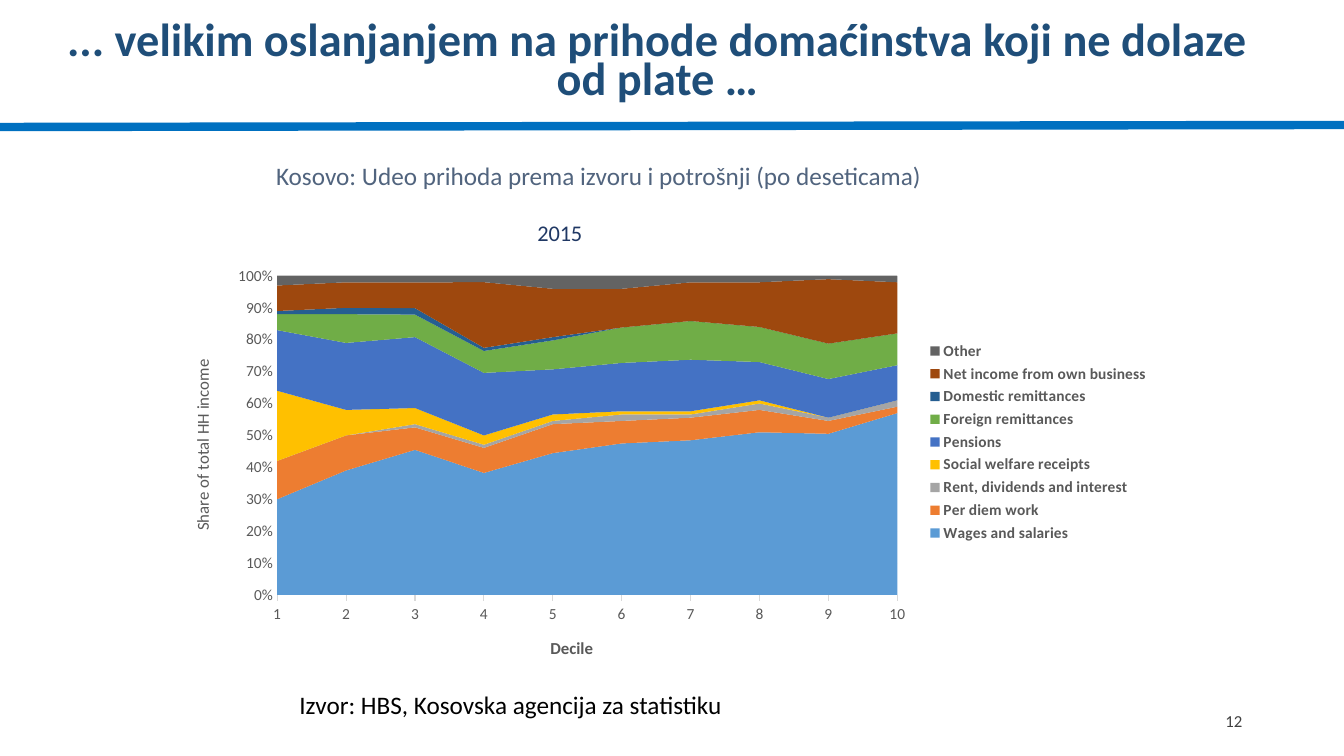
from lxml.etree import SubElement
from pptx import Presentation
from pptx.chart.data import CategoryChartData
from pptx.dml.color import RGBColor
from pptx.enum.chart import XL_CHART_TYPE, XL_LEGEND_POSITION, XL_TICK_MARK
from pptx.enum.shapes import MSO_CONNECTOR
from pptx.enum.text import MSO_ANCHOR, MSO_AUTO_SIZE, PP_ALIGN
from pptx.oxml import parse_xml
from pptx.oxml.ns import nsdecls, qn
from pptx.util import Inches, Pt

FONT = "Calibri"
TITLE_BLUE = RGBColor(0x1F, 0x4E, 0x79)
RULE_BLUE = RGBColor(0x00, 0x70, 0xC0)
SUBTITLE_BLUE = RGBColor(0x51, 0x64, 0x7E)
YEAR_BLUE = RGBColor(0x20, 0x38, 0x64)
BLACK = RGBColor(0, 0, 0)
NUMBER_GRAY = RGBColor(0x40, 0x40, 0x40)
AXIS_GRAY = RGBColor(0x59, 0x59, 0x59)
GRID_GRAY = RGBColor(0xD9, 0xD9, 0xD9)

INCOME_SOURCES = [
    ("Wages and salaries", (30, 39, 45, 39, 44, 47, 48, 51, 50, 57), RGBColor(0x5B, 0x9B, 0xD5)),
    ("Per diem work", (12, 11, 7, 8, 9, 7, 7, 7, 4, 2), RGBColor(0xED, 0x7D, 0x31)),
    ("Rent, dividends and interest", (0, 0, 1, 1, 1, 2, 1, 2, 1, 2), RGBColor(0xA5, 0xA5, 0xA5)),
    ("Social welfare receipts", (22, 8, 5, 3, 2, 1, 1, 1, 0, 0), RGBColor(0xFF, 0xC0, 0x00)),
    ("Pensions", (19, 21, 22, 20, 14, 15, 16, 12, 12, 11), RGBColor(0x44, 0x72, 0xC4)),
    ("Foreign remittances", (5, 9, 7, 7, 9, 11, 12, 11, 11, 10), RGBColor(0x70, 0xAD, 0x47)),
    ("Domestic remittances", (1, 2, 2, 1, 1, 0, 0, 0, 0, 0), RGBColor(0x25, 0x5E, 0x91)),
    ("Net income from own business", (8, 8, 8, 21, 15, 12, 12, 14, 20, 16), RGBColor(0x9E, 0x48, 0x0E)),
    ("Other", (3, 2, 2, 2, 4, 4, 2, 2, 1, 2), RGBColor(0x63, 0x63, 0x63)),
]


def style_font(font, size, color, bold=False):
    font.name = FONT
    font.size = Pt(size)
    font.bold = bold
    font.color.rgb = color


def fill_frame(frame, text, size, color, align, bold=False):
    frame.word_wrap = True
    frame.text = text
    paragraph = frame.paragraphs[0]
    paragraph.alignment = align
    style_font(paragraph.runs[0].font, size, color, bold)


def add_title(slide, text):
    title = slide.shapes.title
    title.left, title.top, title.width, title.height = map(Inches, (0.52, 0.35, 12, 0.94))
    frame = title.text_frame
    fill_frame(frame, text, 33.1, TITLE_BLUE, PP_ALIGN.CENTER, True)
    frame.auto_size = MSO_AUTO_SIZE.NONE
    frame.vertical_anchor = MSO_ANCHOR.MIDDLE
    frame.margin_bottom = Inches(0.42)
    frame.paragraphs[0].line_spacing = 0.7


def add_label(slide, text, box, size, color, align=PP_ALIGN.LEFT, anchor=MSO_ANCHOR.TOP):
    label = slide.shapes.add_textbox(*map(Inches, box))
    fill_frame(label.text_frame, text, size, color, align)
    label.text_frame.vertical_anchor = anchor


def add_rule(slide):
    rule = slide.shapes.add_connector(
        MSO_CONNECTOR.STRAIGHT, Inches(0), Inches(1.26), Inches(13.33), Inches(1.24))
    rule.line.color.rgb = RULE_BLUE
    rule.line.width = Pt(6)
    SubElement(rule._element.spPr, qn("a:effectLst"))


def place(element, x, y, width=None, height=None, inner=False):
    """Set a manual layout, in fractions of the chart, on a chart part."""
    for old in element.findall(qn("c:layout")):
        element.remove(old)
    layout = parse_xml(f"<c:layout {nsdecls('c')}><c:manualLayout/></c:layout>")
    settings = [("layoutTarget", "inner" if inner else None), ("xMode", "edge"),
                ("yMode", "edge"), ("x", x), ("y", y), ("w", width), ("h", height)]
    for tag, value in settings:
        if value is not None:
            SubElement(layout[0], qn(f"c:{tag}")).set("val", str(value))
    # The layout follows the title text or legend position, or leads the plot area
    before = [child for child in element
              if child.tag in (qn("c:tx"), qn("c:legendPos"), qn("c:legendEntry"))]
    element.insert(len(before), layout)


def style_axis(axis, title, bold, tick_mark):
    fill_frame(axis.axis_title.text_frame, title, 12, AXIS_GRAY, PP_ALIGN.CENTER, bold)
    style_font(axis.tick_labels.font, 11, AXIS_GRAY)
    axis.major_tick_mark = tick_mark
    axis.minor_tick_mark = XL_TICK_MARK.NONE


def add_income_chart(slide):
    data = CategoryChartData(number_format="0.0")
    data.categories = [str(decile) for decile in range(1, 11)]
    for name, shares, _ in INCOME_SOURCES:
        data.add_series(name, shares)
    chart = slide.shapes.add_chart(
        XL_CHART_TYPE.AREA_STACKED_100, Inches(1.69), Inches(2), Inches(9.81), Inches(4.76), data).chart
    style_font(chart.font, 10, BLACK)
    chart.plots[0].vary_by_categories = False
    for series, (_, _, color) in zip(chart.plots[0].series, INCOME_SOURCES):
        series.format.fill.solid()
        series.format.fill.fore_color.rgb = color

    # Year above the plot
    fill_frame(chart.chart_title.text_frame, "2015", 16, YEAR_BLUE, PP_ALIGN.CENTER)
    chart.chart_title.include_in_layout = False
    place(chart.chart_title._element, 0.367, 0.025)

    # Axes
    deciles, share = chart.category_axis, chart.value_axis
    style_axis(deciles, "Decile", True, XL_TICK_MARK.OUTSIDE)
    style_axis(share, "Share of total HH income", False, XL_TICK_MARK.NONE)
    share.tick_labels.number_format = "0%"
    share.tick_labels.number_format_is_linked = False
    share.maximum_scale, share.minimum_scale, share.major_unit = 1, 0, 0.1
    share.has_major_gridlines = True
    for line in (deciles.format.line, share.major_gridlines.format.line):
        line.color.rgb = GRID_GRAY
        line.width = Pt(0.75)
    share.format.line.fill.background()
    share._element.find(qn("c:crossBetween")).set("val", "midCat")

    # Legend
    chart.has_legend = True
    chart.legend.position = XL_LEGEND_POSITION.RIGHT
    chart.legend.include_in_layout = False
    style_font(chart.legend.font, 11, AXIS_GRAY, True)
    place(chart.legend._element, 0.76, 0.284, 0.235, 0.435)
    place(chart._chartSpace.chart.plotArea, 0.108, 0.155, 0.627, 0.665, inner=True)


def main():
    prs = Presentation()
    prs.slide_width, prs.slide_height = Inches(13.33), Inches(7.5)
    slide = prs.slides.add_slide(prs.slide_layouts[5])
    add_title(slide, "... velikim oslanjanjem na prihode domaćinstva koji ne dolaze od plate …")
    add_label(slide, "Kosovo: Udeo prihoda prema izvoru i potrošnji (po deseticama)",
              (2.64, 1.54, 6.77, 0.4), 18, SUBTITLE_BLUE)
    add_label(slide, "Izvor: HBS, Kosovska agencija za statistiku",
              (2.87, 6.79, 5.29, 0.4), 18, BLACK)
    add_rule(slide)
    add_label(slide, "12", (9.42, 6.95, 3, 0.4), 12, NUMBER_GRAY, PP_ALIGN.RIGHT, MSO_ANCHOR.MIDDLE)
    add_income_chart(slide)
    prs.save("out.pptx")


if __name__ == "__main__":
    main()
